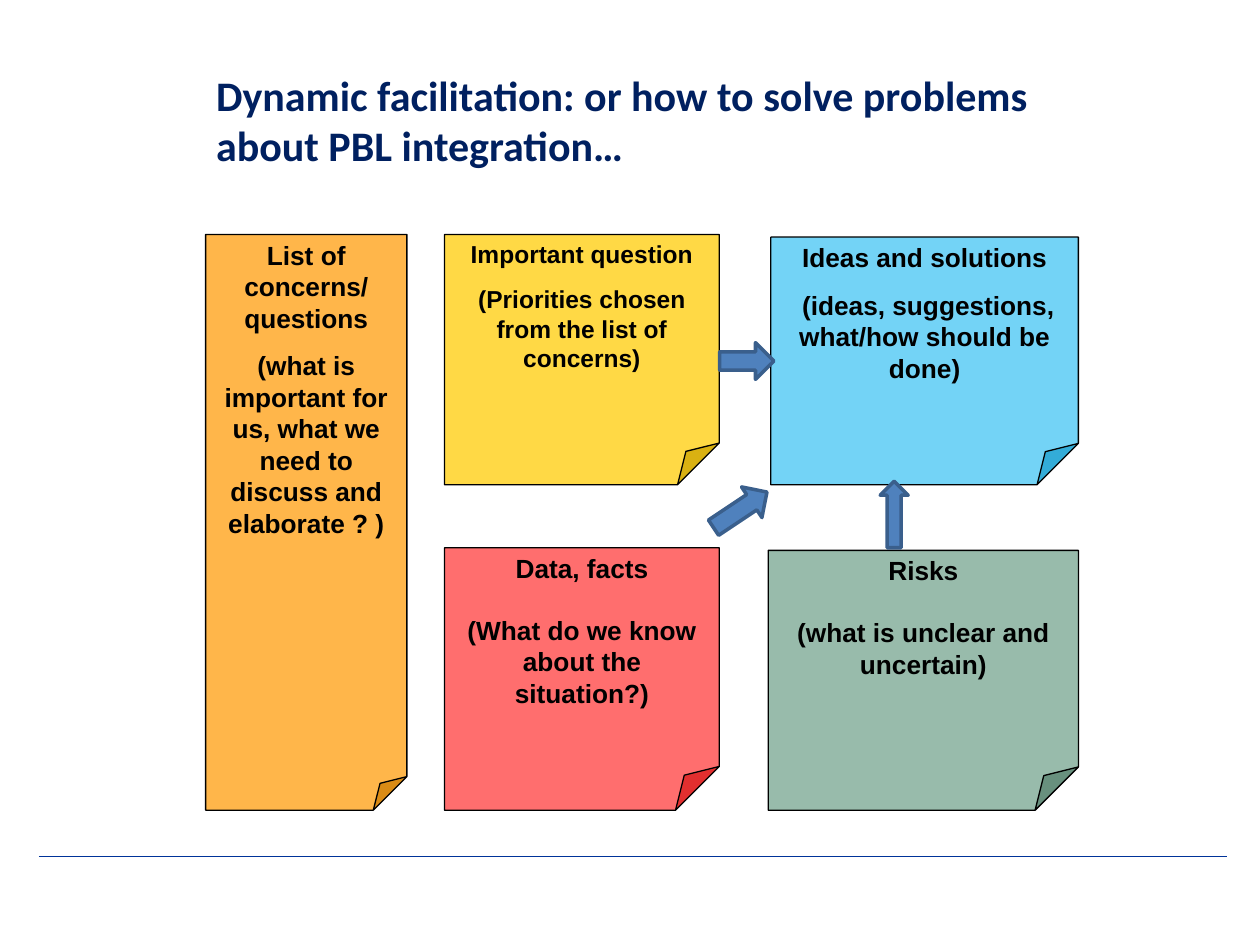
import pptx
import pptx.util
import pptx.dml.color
import pptx.enum.shapes
import pptx.enum.text
import pptx.oxml
import pptx.oxml.ns

Pt = pptx.util.Pt
Kind = pptx.enum.shapes.MSO_SHAPE
Align = pptx.enum.text.PP_ALIGN
Anchor = pptx.enum.text.MSO_ANCHOR

HUES = {
    "title": "002060", "rule": "003399", "ink": "000000",
    "list": "FF9900", "ask": "FFCC00", "data": "FF0000",
    "risk": "669A82", "idea": "00B0F0",
    "arrow": "4F81BD", "edge": "3A5F8C",
}


class Board:
    def __init__(self, deck):
        self.slide = deck.slides.add_slide(deck.slide_layouts[6])
        self.font = "Arial"
        self.thin = 0.75

    def hue(self, name):
        return pptx.dml.color.RGBColor.from_string(HUES[name])

    def label(self, shape, lines, size, font, ink, align, pad):
        frame = shape.text_frame
        frame.word_wrap = True
        frame.vertical_anchor = Anchor.TOP
        frame.margin_left = frame.margin_right = Pt(pad)
        frame.margin_top = frame.margin_bottom = Pt(pad / 2)
        for num, (text, gap) in enumerate(lines):
            para = frame.add_paragraph() if num else frame.paragraphs[0]
            para.text = text
            para.alignment = align
            if gap:
                para.space_before = Pt(gap)
            para.font.name = font
            para.font.size = Pt(size)
            para.font.bold = True
            para.font.color.rgb = self.hue(ink)

    def shape(self, kind, box, fill, edge, width):
        shape = self.slide.shapes.add_shape(kind, *map(Pt, box))
        shape.shadow.inherit = False
        shape.fill.solid()
        shape.fill.fore_color.rgb = self.hue(fill)
        shape.line.color.rgb = self.hue(edge)
        shape.line.width = Pt(width)
        return shape

    def note(self, box, fill, alpha, lines, size=15):
        shape = self.shape(Kind.FOLDED_CORNER, box, fill, "ink", self.thin)
        tint = shape._element.spPr.find(
            pptx.oxml.ns.qn("a:solidFill")).find(pptx.oxml.ns.qn("a:srgbClr"))
        node = pptx.oxml.parse_xml(
            f'<a:alpha {pptx.oxml.ns.nsdecls("a")} val="{alpha * 1000}"/>')
        tint.append(node)
        self.label(shape, lines, size, self.font, "ink", Align.CENTER, 5)

    def arrow(self, box, turn=0):
        shape = self.shape(Kind.UP_ARROW, box, "arrow", "edge", 2)
        shape.rotation = turn

    def title(self, box, text):
        shape = self.slide.shapes.add_textbox(*map(Pt, box))
        self.label(shape, [(text, 0)], 24, "Calibri", "title", Align.LEFT, 4.5)

    def rule(self, left, right, top):
        line = self.slide.shapes.add_connector(
            pptx.enum.shapes.MSO_CONNECTOR.STRAIGHT,
            Pt(left), Pt(top), Pt(right), Pt(top))
        line.line.color.rgb = self.hue("rule")
        line.line.width = Pt(self.thin)
        line._element.spPr.append(
            pptx.oxml.parse_xml(f'<a:effectLst {pptx.oxml.ns.nsdecls("a")}/>'))


def main():
    deck = pptx.Presentation()
    deck.slide_width, deck.slide_height = Pt(720), Pt(540)
    board = Board(deck)
    small, large = 9.2, 17.25

    board.rule(22.3, 701.3, 489.5)
    board.note((117.5, 134, 115, 329), "list", 71, [
        ("List of concerns/", 0),
        ("questions", 0),
        ("(what is important for us, what we need to discuss and elaborate ? )", small)])
    board.note((254, 134, 157, 143), "ask", 73, [
        ("Important question", 0),
        ("(Priorities chosen from the list of concerns)", small)], 14)
    board.note((254, 313, 157, 150), "data", 57, [
        ("Data, facts", 0),
        ("(What do we know about the situation?)", large)])
    board.note((439, 314.5, 177.25, 148.5), "risk", 67, [
        ("Risks", 0),
        ("(what is unclear and uncertain)", large)])
    board.note((440.5, 135.5, 175.75, 141.5), "idea", 55, [
        ("Ideas and solutions", 0),
        (" (ideas, suggestions, what/how should be done)", small)])
    board.title((119, 37.5, 497, 38),
                "Dynamic facilitation: or how to solve problems about PBL integration…")
    board.arrow((416.2, 190.8, 21, 31), 90)
    board.arrow((503, 275, 16, 38))
    board.arrow((412.5, 273, 21, 36.7), 56.3)
    deck.save("out.pptx")


if __name__ == "__main__":
    main()
